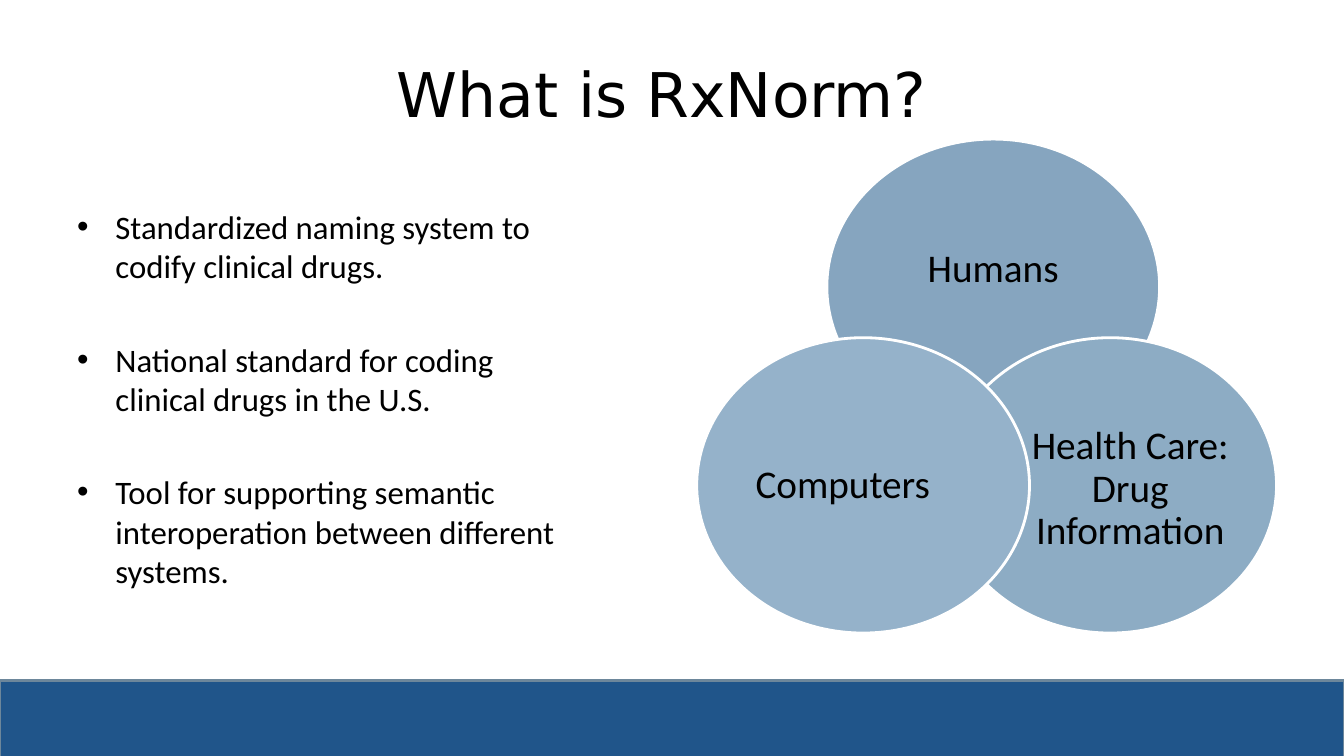
import dataclasses

import lxml.etree
import pptx
import pptx.dml.color
import pptx.enum.shapes
import pptx.enum.text
import pptx.oxml.ns
import pptx.util

SHAPE = pptx.enum.shapes.MSO_SHAPE
ANCHOR = pptx.enum.text.MSO_ANCHOR
ALIGN = pptx.enum.text.PP_ALIGN
WIDTH = pptx.util.Inches(13.33)
HEIGHT = pptx.util.Inches(7.5)
GRID = 100


@dataclasses.dataclass(frozen=True)
class Theme:
    ink: str = "000000"
    outline: str = "FFFFFF"
    footer: str = "20558A"
    footer_line: str = "6D879B"
    humans: str = "86A5BF"
    health: str = "8DACC4"
    computers: str = "95B2CA"
    line_pt: float = 2
    title_pt: float = 44
    body_pt: float = 23.4
    label_pt: float = 28
    bullet_gap_pt: float = 38.6
    title_font: str = "DejaVu Sans"
    body_font: str = "Calibri"


@dataclasses.dataclass(frozen=True)
class Box:
    col: float
    row: float
    cols: float
    rows: float

    def emu(self) -> tuple[int, int, int, int]:
        return (
            round(WIDTH * self.col / GRID),
            round(HEIGHT * self.row / GRID),
            round(WIDTH * self.cols / GRID),
            round(HEIGHT * self.rows / GRID),
        )


@dataclasses.dataclass(frozen=True)
class Circle:
    text: str
    fill: str
    col: float
    row: float
    label: Box


THEME = Theme()
CIRCLE_COLS, CIRCLE_ROWS = 24.76, 39.07
FOOTER = Box(0, 90, 100, 11.07)
TITLE = Box(5, 4, 90, 16.67)
BODY = Box(5, 26.67, 39.38, 57.73)
BULLETS = (
    "Standardized naming system to codify clinical drugs.",
    "National standard for coding clinical drugs in the U.S.",
    "Tool for supporting semantic interoperation between different systems.",
)
CIRCLES = (
    Circle("Humans", THEME.humans, 61.52, 18.4, Box(64.82, 26.93, 18.15, 17.6)),
    Circle("Health Care: Drug Information", THEME.health, 70.22, 44.67,
           Box(76.67, 54, 14.85, 21.47)),
    Circle("Computers", THEME.computers, 51.84, 44.67,
           Box(55.29, 53.47, 14.85, 21.47)),
)


def apply(target: object, values: dict) -> None:
    for name, value in values.items():
        setattr(target, name, value)


def rgb(color: str) -> pptx.dml.color.RGBColor:
    return pptx.dml.color.RGBColor.from_string(color)


def add_filled(s, kind, box: Box, fill: str, line: str) -> None:
    sp = s.shapes.add_shape(kind, *box.emu())
    sp.shadow.inherit = False
    sp.fill.solid()
    sp.fill.fore_color.rgb = rgb(fill)
    sp.line.color.rgb = rgb(line)
    sp.line.width = pptx.util.Pt(THEME.line_pt)


def add_frame(s, box: Box, values: dict):
    tf = s.shapes.add_textbox(*box.emu()).text_frame
    apply(tf, {"word_wrap": True, **values})
    return tf


def write(p, text: str, size: float, font: str, values: dict) -> None:
    apply(p, values)
    r = p.add_run()
    r.text = text
    apply(r.font, {"size": pptx.util.Pt(size), "name": font})
    r.font.color.rgb = rgb(THEME.ink)


def add_bullet(p) -> None:
    indent = pptx.util.Inches(0.38)
    pPr = p._p.get_or_add_pPr()
    pPr.set("marL", str(indent))
    pPr.set("indent", str(-indent))
    font = lxml.etree.SubElement(pPr, pptx.oxml.ns.qn("a:buFont"))
    font.set("typeface", "Arial")
    mark = lxml.etree.SubElement(pPr, pptx.oxml.ns.qn("a:buChar"))
    mark.set("char", "•")


def add_title(s) -> None:
    tf = add_frame(s, TITLE, {"vertical_anchor": ANCHOR.MIDDLE})
    write(tf.paragraphs[0], "What is RxNorm? ", THEME.title_pt,
          THEME.title_font, {"alignment": ALIGN.CENTER})


def add_body(s) -> None:
    tf = add_frame(s, BODY, {"vertical_anchor": ANCHOR.TOP})
    for i, text in enumerate(BULLETS):
        p = tf.add_paragraph() if i else tf.paragraphs[0]
        add_bullet(p)
        gap = THEME.bullet_gap_pt if i else 0
        write(p, text, THEME.body_pt, THEME.body_font,
              {"space_before": pptx.util.Pt(gap)})


def add_circle(s, circle: Circle) -> None:
    box = Box(circle.col, circle.row, CIRCLE_COLS, CIRCLE_ROWS)
    add_filled(s, SHAPE.OVAL, box, circle.fill, THEME.outline)
    margins = dict.fromkeys(
        ("margin_left", "margin_top", "margin_right", "margin_bottom"), 0)
    tf = add_frame(s, circle.label, {"vertical_anchor": ANCHOR.MIDDLE, **margins})
    write(tf.paragraphs[0], circle.text, THEME.label_pt, THEME.body_font,
          {"alignment": ALIGN.CENTER, "line_spacing": 0.9})


def main() -> None:
    prs = pptx.Presentation()
    apply(prs, {"slide_width": WIDTH, "slide_height": HEIGHT})
    s = prs.slides.add_slide(prs.slide_layouts[6])
    add_filled(s, SHAPE.RECTANGLE, FOOTER, THEME.footer, THEME.footer_line)
    add_title(s)
    add_body(s)
    for circle in CIRCLES:
        add_circle(s, circle)
    prs.save("out.pptx")


if __name__ == "__main__":
    main()
